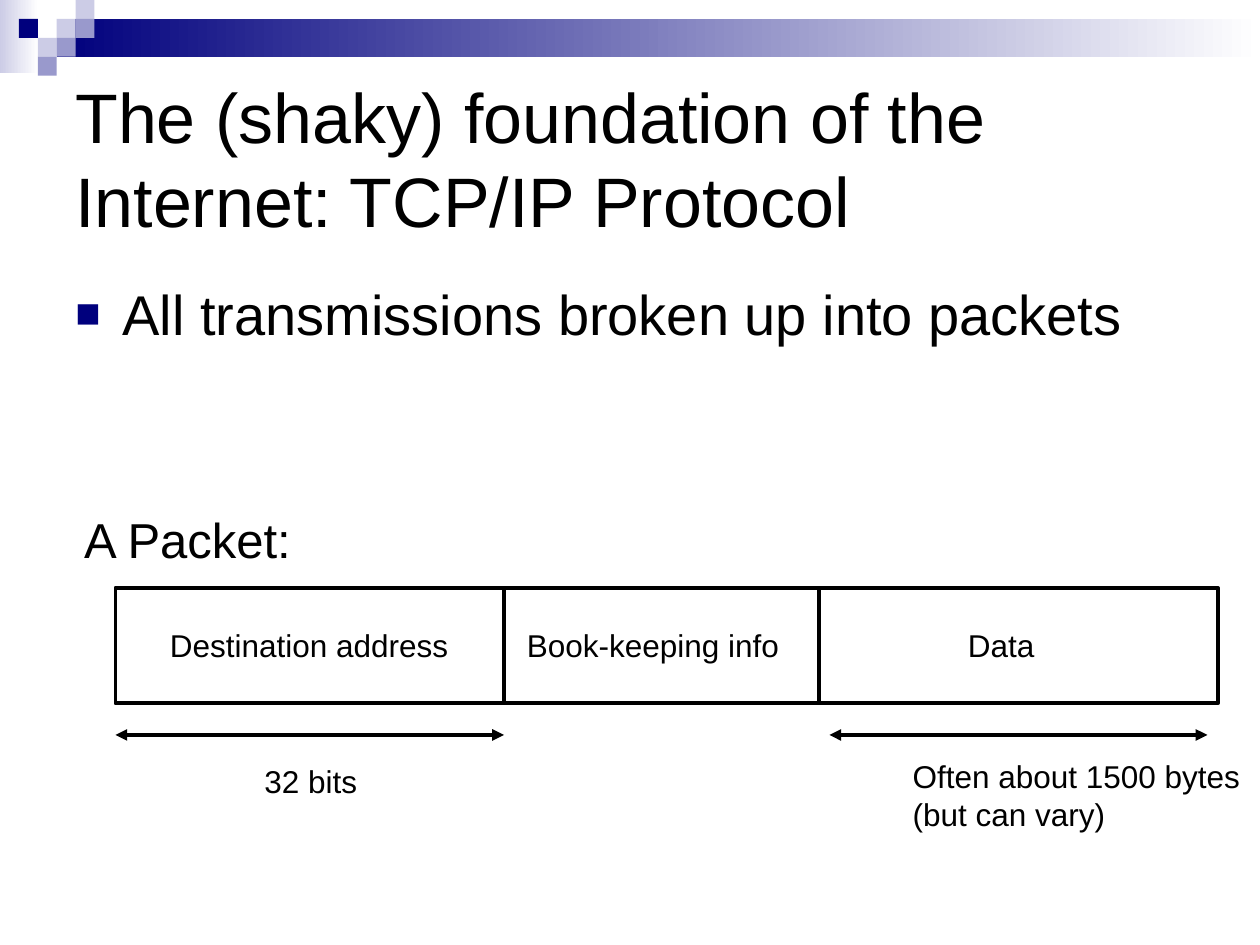
"""Build the TCP/IP packet slide."""
from lxml.etree import SubElement
from pptx import Presentation
from pptx.dml.color import RGBColor
from pptx.enum.shapes import MSO_CONNECTOR, MSO_SHAPE
from pptx.enum.text import MSO_ANCHOR, MSO_AUTO_SIZE
from pptx.oxml import parse_xml
from pptx.oxml.ns import nsdecls, qn
from pptx.util import Pt


def rgb(color):
    return RGBColor.from_string(color)


def add_text(text, x, y, w, h, size, wrap=False):
    tf = s.shapes.add_textbox(Pt(x), Pt(y), Pt(w), Pt(h)).text_frame
    tf.word_wrap = wrap
    tf.auto_size = MSO_AUTO_SIZE.NONE if wrap else MSO_AUTO_SIZE.SHAPE_TO_FIT_TEXT
    p = tf.paragraphs[0]
    p.text = text
    for r in p.runs:
        r.font.name = "Arial"
        r.font.size = Pt(size)
        r.font.color.rgb = rgb("000000")
    return tf


prs = Presentation()
prs.slide_width, prs.slide_height = Pt(720), Pt(540)
s = prs.slides.add_slide(prs.slide_layouts[6])

navy, violet, lilac = "00007D", "9999CC", "CCCCE6"
for x, y, w, h, color in [(0, 0, 22, 42, lilac), (32.4, 10.8, 687.6, 21.6, navy)]:
    sp = s.shapes.add_shape(MSO_SHAPE.RECTANGLE, Pt(x), Pt(y), Pt(w), Pt(h))
    sp.shadow.inherit = False
    sp.line.fill.background()
    sp.fill.gradient()
    sp.fill.gradient_angle = 0
    for stop, stop_color, position in zip(sp.fill.gradient_stops, (color, "FFFFFF"), (0, 1)):
        stop.color.rgb = rgb(stop_color)
        stop.position = position

cell = 10.8
for col, row, color in [(3, 1, lilac), (4, 0, lilac), (4, 1, violet), (2, 2, lilac),
                        (1, 1, navy), (3, 2, violet), (2, 3, violet)]:
    sp = s.shapes.add_shape(MSO_SHAPE.RECTANGLE, Pt(col * cell), Pt(row * cell), Pt(cell), Pt(cell))
    sp.shadow.inherit = False
    sp.fill.solid()
    sp.fill.fore_color.rgb = rgb(color)
    sp.line.fill.background()

title = add_text("The (shaky) foundation of the Internet: TCP/IP Protocol", 36, 36, 648, 108, 40, True)
title.vertical_anchor = MSO_ANCHOR.MIDDLE

body = add_text("All transmissions broken up into packets", 36, 156, 648, 342, 32, True)
pPr = body.paragraphs[0]._p.get_or_add_pPr()
pPr.set("marL", str(Pt(27)))
pPr.set("indent", str(Pt(-27)))
for xml in ['<a:spcBef {}><a:spcPct val="20000"/></a:spcBef>',
            '<a:buClr {}><a:srgbClr val="00007D"/></a:buClr>',
            '<a:buSzPct {} val="75000"/>',
            '<a:buFont {} typeface="Arial"/>',
            '<a:buChar {} char="■"/>']:
    pPr.append(parse_xml(xml.format(nsdecls("a"))))

left, top, width, height = 66, 336, 630, 66
sp = s.shapes.add_shape(MSO_SHAPE.RECTANGLE, Pt(left), Pt(top), Pt(width), Pt(height))
sp.shadow.inherit = False
sp.fill.background()
sp.line.color.rgb = rgb("000000")
sp.line.width = Pt(2.25)

bottom = top + height
for x1, y1, x2, y2, arrows in [(288, bottom, 288, top, False), (468, bottom, 468, top, False),
                               (left, 420, 288, 420, True), (474, 420, 690, 420, True)]:
    c = s.shapes.add_connector(MSO_CONNECTOR.STRAIGHT, Pt(x1), Pt(y1), Pt(x2), Pt(y2))
    c.line.color.rgb = rgb("000000")
    c.line.width = Pt(2.25)
    if arrows:
        for end in ("a:headEnd", "a:tailEnd"):
            SubElement(c.line._get_or_add_ln(), qn(end), type="triangle")
    SubElement(c._element.spPr, qn("a:effectLst"))

for text, x, y, w, h, size in [
    ("Destination address", 90, 354, 173.5, 29, 18),
    ("Book-keeping info", 294, 354, 158.5, 29, 18),
    ("Data", 546, 354, 52.5, 29, 18),
    ("32 bits", 144, 432, 67.5, 29, 18),
    ("Often about 1500 bytes\n(but can vary)", 514.5, 429, 201.5, 50.5, 18),
    ("A Packet:", 41, 287.5, 134.5, 41, 28),
]:
    add_text(text, x, y, w, h, size)

prs.save("out.pptx")
